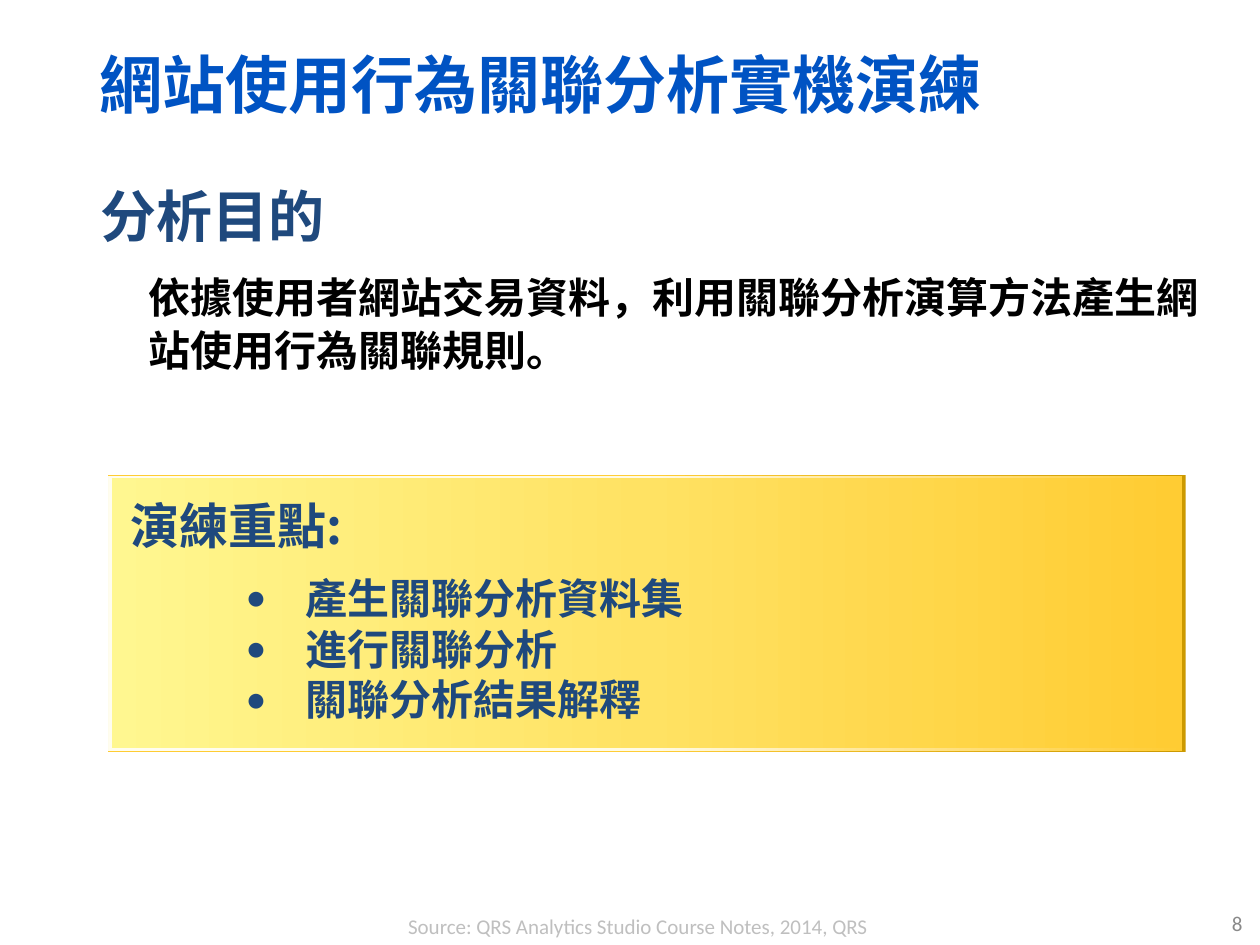
"""Build the slide on association analysis of website usage."""
from copy import deepcopy
from dataclasses import dataclass

from lxml import etree
from pptx import Presentation
from pptx.dml.color import RGBColor
from pptx.enum.shapes import MSO_SHAPE
from pptx.enum.text import MSO_ANCHOR, PP_ALIGN
from pptx.oxml.ns import qn
from pptx.util import Inches, Pt

RECTANGLE = MSO_SHAPE.RECTANGLE
LEFT, RIGHT = PP_ALIGN.LEFT, PP_ALIGN.RIGHT
TOP, MIDDLE = MSO_ANCHOR.TOP, MSO_ANCHOR.MIDDLE


@dataclass(frozen=True)
class Theme:
    latin: str = "Calibri"
    chinese: str = "Noto Sans CJK SC"
    title: str = "0053C3"
    heading: str = "1F497D"
    body: str = "000000"
    number: str = "898989"
    source: str = "BFBFBF"
    title_size: int = 36
    section_size: int = 32
    panel_size: int = 28
    body_size: int = 24
    footer_size: int = 12


theme = Theme()


def add_box(left, top, width, height, wrap=True, anchor=TOP):
    box = page.shapes.add_textbox(Inches(left), Inches(top), Inches(width), Inches(height))
    box.text_frame.word_wrap = wrap
    box.text_frame.vertical_anchor = anchor
    return box.text_frame


def write(frame, text, size, color, font=theme.chinese, bold=True, align=LEFT,
          line=None, before=0, margin=0, hanging=0, bullet=None):
    para = frame.paragraphs[0]
    if para.runs:
        para = frame.add_paragraph()
    para.alignment = align
    para.space_before = Pt(before)
    if line:
        para.line_spacing = Pt(line)
    properties = para._p.get_or_add_pPr()
    properties.set("marL", str(Inches(margin)))
    properties.set("indent", str(-Inches(hanging)))
    if bullet:
        etree.SubElement(properties, qn("a:buFont"), typeface=theme.latin)
        etree.SubElement(properties, qn("a:buChar"), char=bullet)
    span = para.add_run()
    span.text = text
    span.font.name = font
    span.font.size = Pt(size)
    span.font.bold = bold
    span.font.color.rgb = RGBColor.from_string(color)
    etree.SubElement(span._r.get_or_add_rPr(), qn("a:ea"), typeface=font)


deck = Presentation()
deck.slide_width, deck.slide_height = Inches(10), Inches(7.5)
page = deck.slides.add_slide(deck.slide_layouts[6])

number = add_box(7.63, 7.13, 2.33, 0.4, anchor=MIDDLE)
write(number, "8", theme.footer_size, theme.number, theme.latin, bold=False, align=RIGHT)

source = add_box(3.14, 7.2, 3.91, 0.3, wrap=False)
write(source, "Source: QRS Analytics Studio Course Notes, 2014, QRS",
      theme.footer_size, theme.source, theme.latin, bold=False)

purpose = add_box(0.7, 1.34, 8.97, 1.86)
write(purpose, "分析目的", theme.section_size, theme.heading, line=42)
write(purpose, "依據使用者網站交易資料，利用關聯分析演算方法產生網站使用行為關聯規則。",
      theme.body_size, theme.body, line=30, before=12, margin=0.38)

panel_layers = [
    ((0.86, 3.77, 8.55, 2.2), ("CC9900", "FFCD37", "FFCC33")),
    ((0.86, 3.78, 8.52, 2.18), ("FFCC33", "FFFBE5", "FFFDEF")),
    ((0.89, 3.79, 8.46, 2.15), ("FFCC33", "FFE263", "FFF790")),
]
for bounds, colors in panel_layers:
    panel = page.shapes.add_shape(RECTANGLE, *map(Inches, bounds))
    panel.shadow.inherit = False
    panel.line.fill.background()
    panel.fill.gradient()
    panel.fill.gradient_angle = 180
    stop_list = panel._element.spPr.find(f".//{qn('a:gsLst')}")
    stop_list.append(deepcopy(stop_list[-1]))
    for stop, position, color in zip(panel.fill.gradient_stops, (0, 0.5, 1), colors):
        stop.position = position
        stop.color.rgb = RGBColor.from_string(color)

focus = add_box(0.94, 3.85, 2.55, 0.57)
write(focus, "演練重點:", theme.panel_size, theme.heading, line=36)

steps = add_box(1.77, 4.49, 6.72, 1.72)
for step in ("產生關聯分析資料集", "進行關聯分析", "關聯分析結果解釋"):
    write(steps, step, theme.body_size, theme.heading, line=29,
          margin=0.56, hanging=0.48, bullet="•")

title = add_box(0.69, 0.36, 8.97, 0.87)
write(title, "網站使用行為關聯分析實機演練", theme.title_size, theme.title, line=40)

deck.save("out.pptx")
